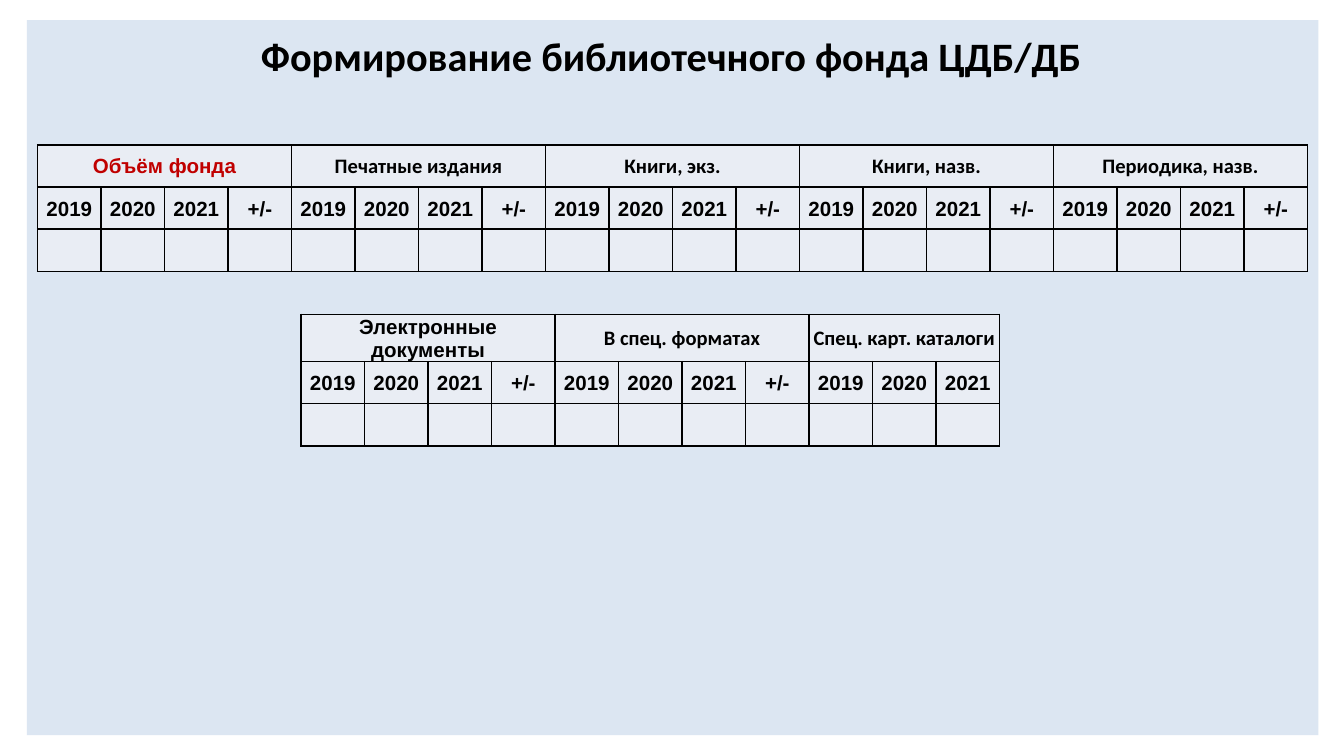
from lxml.etree import SubElement
from pptx import Presentation
from pptx.dml.color import RGBColor
from pptx.enum.shapes import MSO_SHAPE
from pptx.enum.text import MSO_ANCHOR, PP_ALIGN
from pptx.oxml.ns import qn
from pptx.util import Inches, Pt

COLOURS = {"panel": "DCE6F2", "cell": "E9EDF4", "text": "000000", "accent": "C00000", "border": "000000"}
YEARS = ["2019", "2020", "2021"]
CHANGE = "+/-"


def write_text(frame, text, font="Calibri", size=11, colour="text"):
    """Write one centred bold line of text into a frame."""
    paragraph = frame.paragraphs[0]
    paragraph.alignment = PP_ALIGN.CENTER
    span = paragraph.add_run()
    span.text = text
    span.font.name = font
    span.font.size = Pt(size)
    span.font.bold = True
    span.font.color.rgb = RGBColor.from_string(COLOURS[colour])


class FundSlide:
    """Holds the page and draws its elements in one style."""

    def __init__(self, page):
        self.page = page

    def add_panel(self, left, top, width, height):
        """Draw the tinted panel behind everything else."""
        panel = self.page.shapes.add_shape(
            MSO_SHAPE.RECTANGLE, Inches(left), Inches(top), Inches(width), Inches(height))
        panel.shadow.inherit = False
        panel.fill.solid()
        panel.fill.fore_color.rgb = RGBColor.from_string(COLOURS["panel"])
        panel.line.fill.background()
        self.page.shapes._spTree.insert(2, panel._element)

    def add_title(self, text, left, top, width, height):
        """Place and format the title placeholder."""
        title = self.page.shapes.title
        title.left, title.top = Inches(left), Inches(top)
        title.width, title.height = Inches(width), Inches(height)
        title.text_frame.vertical_anchor = MSO_ANCHOR.MIDDLE
        write_text(title.text_frame, text, size=21.6)

    def style_cell(self, cell):
        """Give a cell its fill, margins, borders and empty-text size."""
        cell.margin_left = cell.margin_right = cell.margin_top = Inches(0.01)
        cell.margin_bottom = 0
        cell.vertical_anchor = MSO_ANCHOR.MIDDLE
        cell.text_frame.paragraphs[0]._p.get_or_add_endParaRPr().set("sz", "1100")
        properties = cell._tc.get_or_add_tcPr()
        for side in ("a:lnL", "a:lnR", "a:lnT", "a:lnB"):
            line = SubElement(properties, qn(side), w=str(Pt(1)))
            fill = SubElement(line, qn("a:solidFill"))
            SubElement(fill, qn("a:srgbClr"), val=COLOURS["border"])
        cell.fill.solid()
        cell.fill.fore_color.rgb = RGBColor.from_string(COLOURS["cell"])

    def add_table(self, groups, left, top, width, height):
        """Draw a table of column groups, each a heading, its format and its labels."""
        count = sum(len(labels) for _, _, labels in groups)
        table = self.page.shapes.add_table(
            3, count, Inches(left), Inches(top), Inches(width), Inches(height)).table
        for column in table.columns:
            column.width = Inches(width / count)
        for cell in table.iter_cells():
            self.style_cell(cell)
        start = 0
        for heading, style, labels in groups:
            end = start + len(labels)
            table.cell(0, start).merge(table.cell(0, end - 1))
            write_text(table.cell(0, start).text_frame, heading, **style)
            for column, label in enumerate(labels, start):
                write_text(table.cell(1, column).text_frame, label, font="Arial")
            start = end


def main():
    """Build the slide and save it."""
    deck = Presentation()
    deck.slide_width, deck.slide_height = Inches(10), Inches(10 * 9 / 16)
    slide = FundSlide(deck.slides.add_slide(deck.slide_layouts[5]))
    slide.add_panel(0.2, 0.15, 9.61, 5.32)
    slide.add_title("Формирование библиотечного фонда ЦДБ/ДБ", 0.35, 0.21, 9.29, 0.41)
    full = YEARS + [CHANGE]
    slide.add_table([
        ("Объём фонда", {"font": "Arial", "colour": "accent"}, full),
        ("Печатные издания", {}, full),
        ("Книги, экз.", {}, full),
        ("Книги, назв.", {}, full),
        ("Периодика, назв.", {}, full),
    ], 0.28, 1.08, 9.45, 0.94)
    slide.add_table([
        ("Электронные документы", {"font": "Arial"}, full),
        ("В спец. форматах", {}, full),
        ("Спец. карт. каталоги", {}, YEARS),
    ], 2.24, 2.34, 5.2, 0.94)
    deck.save("out.pptx")


if __name__ == "__main__":
    main()
